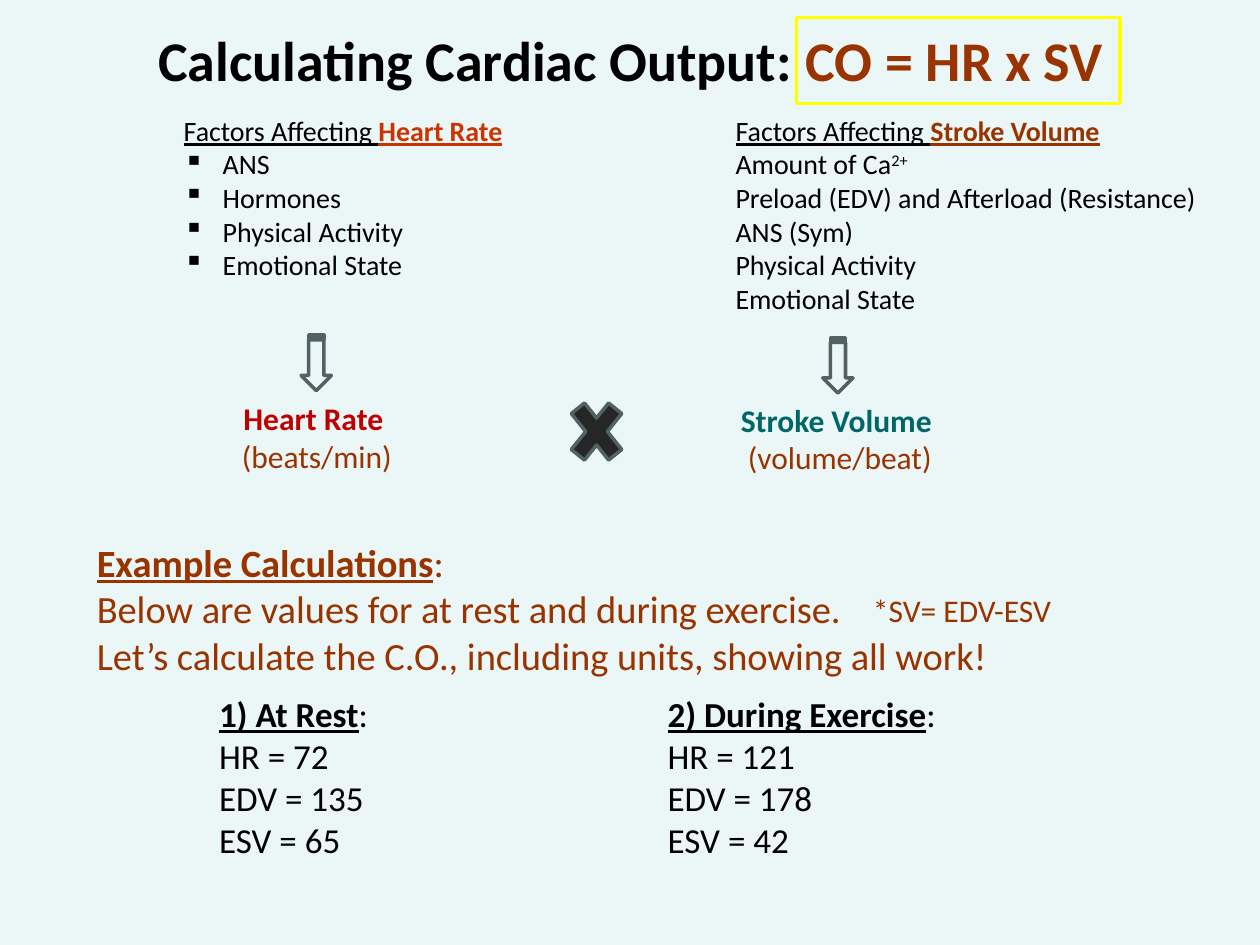
from dataclasses import dataclass

from lxml.etree import SubElement
from pptx import Presentation
from pptx.dml.color import RGBColor
from pptx.enum.shapes import MSO_SHAPE as Shape
from pptx.enum.text import MSO_AUTO_SIZE as AutoSize, PP_ALIGN as Align
from pptx.oxml.ns import qn
from pptx.util import Inches, Pt


@dataclass(frozen=True)
class Theme:
    font: str = "Calibri"
    background: str = "EBF6F7"
    black: str = "000000"
    brown: str = "993300"
    orange: str = "CC3300"
    red: str = "C00000"
    teal: str = "006666"
    dark: str = "262626"
    outline: str = "526263"
    yellow: str = "FFFF00"
    title: int = 32
    example: int = 22
    case: int = 20
    result: int = 18
    factor: int = 16


THEME = Theme()


def rgb(color):
    return RGBColor.from_string(color)


def span(text, color=None, bold=None, underline=None, baseline=None):
    return dict(text=text, color=color, bold=bold,
                underline=underline, baseline=baseline)


def add_bullet(para):
    props = para._p.get_or_add_pPr()
    props.set("marL", str(Inches(0.31)))
    props.set("indent", str(Inches(-0.31)))
    bullet = SubElement(props, qn("a:buChar"))
    bullet.set("char", "▪")


def add_spans(para, spans):
    for part in spans:
        run = para.add_run()
        run.text = part["text"]
        if part["color"]:
            run.font.color.rgb = rgb(part["color"])
        if part["bold"]:
            run.font.bold = True
        if part["underline"]:
            run.font.underline = True
        if part["baseline"]:
            run._r.get_or_add_rPr().set("baseline", str(part["baseline"] * 1000))


def add_text(page, left, top, width, height, lines, size,
             color=THEME.black, align=Align.LEFT, bullets=False):
    """Each line is a string or a list of spans; bullets skip the heading."""
    box = page.shapes.add_textbox(
        Inches(left), Inches(top), Inches(width), Inches(height))
    frame = box.text_frame
    frame.word_wrap = True
    frame.auto_size = AutoSize.SHAPE_TO_FIT_TEXT
    for index, line in enumerate(lines):
        para = frame.add_paragraph() if index else frame.paragraphs[0]
        para.alignment = align
        if bullets and index:
            add_bullet(para)
        para.font.name = THEME.font
        para.font.size = Pt(size)
        para.font.color.rgb = rgb(color)
        add_spans(para, [span(line)] if isinstance(line, str) else line)


def add_symbol(page, kind, left, top, width, height,
               line=THEME.outline, fill=None, rotation=0):
    shape = page.shapes.add_shape(
        kind, Inches(left), Inches(top), Inches(width), Inches(height))
    shape.shadow.inherit = False
    shape.rotation = rotation
    shape.line.color.rgb = rgb(line)
    shape.line.width = Pt(2)
    if fill:
        shape.fill.solid()
        shape.fill.fore_color.rgb = rgb(fill)
    else:
        shape.fill.background()


def add_factors(page, left, width, height, name, color, factors, bullets=False):
    heading = [span("Factors Affecting ", underline=True),
               span(name, color, bold=True, underline=True)]
    add_text(page, left, 0.85, width, height, [heading, *factors],
             THEME.factor, bullets=bullets)


def add_result(page, left, top, width, name, color, unit):
    add_text(page, left, top, width, 0.71,
             [[span(name, color, bold=True)], unit],
             THEME.result, THEME.brown, Align.CENTER)


def add_case(page, left, name, rate, edv, esv):
    heading = [span(name, bold=True, underline=True), span(":")]
    add_text(page, left, 5.45, 2.34, 1.45,
             [heading, f"HR = {rate}", f"EDV = {edv}", f"ESV = {esv}"],
             THEME.case)


def main():
    deck = Presentation()
    deck.slide_width, deck.slide_height = Inches(10), Inches(7.5)
    page = deck.slides.add_slide(deck.slide_layouts[6])
    page.background.fill.solid()
    page.background.fill.fore_color.rgb = rgb(THEME.background)

    # Title with the framed formula
    add_text(page, 0.78, 0.15, 8.45, 0.64,
             [[span("Calculating Cardiac Output: ", bold=True),
               span("CO = HR x SV", THEME.brown, bold=True)]],
             THEME.title, align=Align.CENTER)
    add_symbol(page, Shape.RECTANGLE, 6.32, 0.14, 2.57, 0.68, THEME.yellow)

    # Factors
    shared = ["Physical Activity", "Emotional State"]
    add_factors(page, 1.36, 3.14, 1.45, "Heart Rate", THEME.orange,
                ["ANS", "Hormones", *shared], bullets=True)
    add_factors(page, 5.74, 3.9, 1.72, "Stroke Volume", THEME.brown,
                [[span("Amount of Ca"), span("2+", baseline=30)],
                 "Preload (EDV) and Afterload (Resistance)",
                 "ANS (Sym)", *shared])

    # Arrows down to heart rate times stroke volume
    for left, top in ((2.29, 2.76), (6.43, 2.78)):
        add_symbol(page, Shape.STRIPED_RIGHT_ARROW, left, top, 0.44, 0.24,
                   rotation=90)
    add_result(page, 1.76, 3.12, 1.51, "Heart Rate ", THEME.red, "(beats/min)")
    add_symbol(page, Shape.MATH_MULTIPLY, 4.45, 3.07, 0.57, 0.71,
               fill=THEME.dark)
    add_result(page, 5.74, 3.13, 1.85, "Stroke Volume ", THEME.teal,
               "(volume/beat)")

    # Example calculations
    add_text(page, 0.67, 4.23, 8.76, 1.21,
             [[span("Example Calculations", bold=True, underline=True), span(":")],
              "Below are values for at rest and during exercise.",
              "Let’s calculate the C.O., including units, showing all work!"],
             THEME.example, THEME.brown)
    add_text(page, 6.83, 4.64, 1.76, 0.4, ["*SV= EDV-ESV"],
             THEME.result, THEME.brown)
    add_case(page, 1.64, "1) At Rest", 72, 135, 65)
    add_case(page, 5.2, "2) During Exercise", 121, 178, 42)

    deck.save("out.pptx")


if __name__ == "__main__":
    main()
